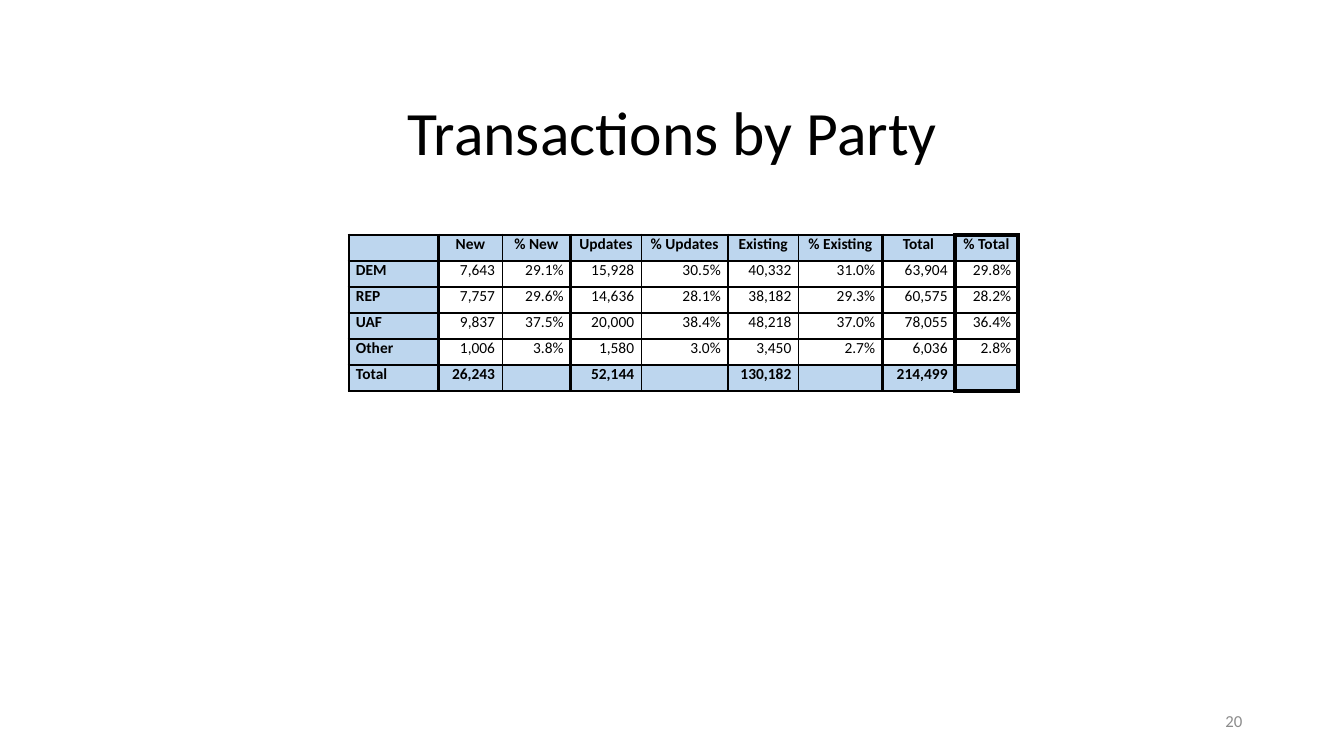
"""Build a slide with a table of transactions by party."""
import pptx
import pptx.dml.color
import pptx.enum.text
import pptx.oxml
import pptx.oxml.ns
import pptx.util

WIDE = pptx.util.Inches(13.33)
HIGH = pptx.util.Inches(7.5)
ALIGN = pptx.enum.text.PP_ALIGN
MIDDLE = pptx.enum.text.MSO_ANCHOR.MIDDLE
BLUE = "BDD6EE"
BLACK = "000000"
COLS = [89, 63, 68, 70, 86, 70, 83, 72, 63]
EDGES = [2.25, 2.25, 1, 2.25, 1, 2.25, 1, 2.25, 3, 3]
ROWS = [
    ["", "New", "% New", "Updates", "% Updates", "Existing", "% Existing", "Total", "% Total"],
    ["DEM", "7,643", "29.1%", "15,928", "30.5%", "40,332", "31.0%", "63,904", "29.8%"],
    ["REP", "7,757", "29.6%", "14,636", "28.1%", "38,182", "29.3%", "60,575", "28.2%"],
    ["UAF", "9,837", "37.5%", "20,000", "38.4%", "48,218", "37.0%", "78,055", "36.4%"],
    ["Other", "1,006", "3.8%", "1,580", "3.0%", "3,450", "2.7%", "6,036", "2.8%"],
    ["Total", "26,243", "", "52,144", "", "130,182", "", "214,499", ""],
]


def area(left, top, width, height):
    """Turn percentages of the slide into lengths."""
    return [int(side * share / 100) for side, share in
            zip((WIDE, HIGH, WIDE, HIGH), (left, top, width, height))]


def paint(target, color):
    """Give a font or a solid fill a hex colour."""
    target.rgb = pptx.dml.color.RGBColor.from_string(color)


def write(frame, text, size, color, align, bold=False):
    """Put one styled paragraph in a text frame."""
    frame.text = text
    para = frame.paragraphs[0]
    para.alignment = align
    para.font.name = "Calibri"
    para.font.size = pptx.util.Pt(size)
    para.font.bold = bold
    paint(para.font.color, color)
    if not text:
        para._p.get_or_add_endParaRPr().set("sz", str(size * 100))
    return para


def border(cell, **widths):
    """Draw black cell borders, widths in points by side."""
    space = pptx.oxml.ns.nsdecls("a")
    for side, width in widths.items():
        line = pptx.oxml.parse_xml(
            f'<a:ln{side} {space} w="{pptx.util.Pt(width)}"><a:solidFill>'
            f'<a:srgbClr val="{BLACK}"/></a:solidFill></a:ln{side}>')
        cell._tc.get_or_add_tcPr().append(line)


def style(cell, text, row, col):
    """Fill in one table cell according to its place."""
    last = len(ROWS) - 1
    outer = 3 if col == len(COLS) - 1 else 2.25
    head = row in (0, last) or col == 0
    cell.margin_left = cell.margin_right = pptx.util.Inches(0.07)
    cell.margin_top = cell.margin_bottom = 0
    align = ALIGN.LEFT if col == 0 else ALIGN.CENTER if row == 0 else ALIGN.RIGHT
    write(cell.text_frame, text, 11, BLACK, align, head)
    border(cell, L=EDGES[col], R=EDGES[col + 1],
           T=outer if row == 0 else 1, B=outer if row == last else 1)
    if head:
        cell.fill.solid()
        paint(cell.fill.fore_color, BLUE)
    else:
        cell.fill.background()


def tabulate(slide, box):
    """Add the table of parties."""
    table = slide.shapes.add_table(len(ROWS), len(COLS), *box).table
    table.first_row = table.horz_banding = False
    for col, part in zip(table.columns, COLS):
        col.width = int(box[2] * part / sum(COLS))
    for r, texts in enumerate(ROWS):
        table.rows[r].height = box[3] // len(ROWS)
        for c, text in enumerate(texts):
            style(table.cell(r, c), text, r, c)


def head(slide, text, box):
    """Place and format the title."""
    title = slide.shapes.title
    title.left, title.top, title.width, title.height = box
    title.text_frame.vertical_anchor = MIDDLE
    write(title.text_frame, text, 44, BLACK, ALIGN.CENTER).line_spacing = 0.9


def number(slide, text, box):
    """Add the page number."""
    frame = slide.shapes.add_textbox(*box).text_frame
    frame.word_wrap = True
    frame.vertical_anchor = MIDDLE
    write(frame, text, 12, "8C8C8C", ALIGN.RIGHT)


def main():
    """Build and save the deck."""
    deck = pptx.Presentation()
    deck.slide_width, deck.slide_height = WIDE, HIGH
    slide = deck.slides.add_slide(deck.slide_layouts[5])
    head(slide, "Transactions by Party", area(6.9, 8.27, 86.27, 19.33))
    tabulate(slide, area(25.96, 31.07, 49.81, 20.67))
    number(slide, "20", area(70.67, 92.67, 22.5, 5.33))
    deck.save("out.pptx")


if __name__ == "__main__":
    main()
